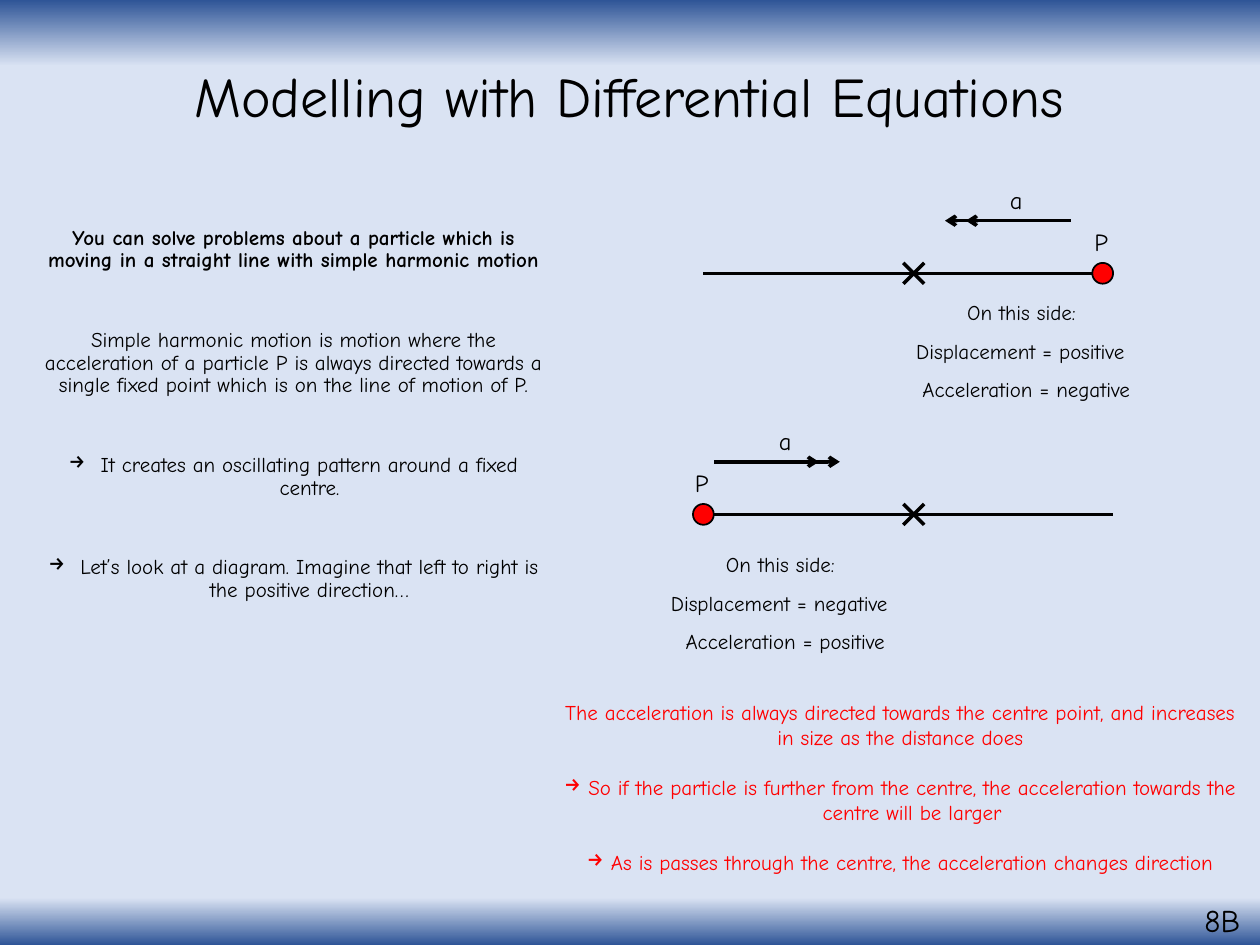
from dataclasses import dataclass
from typing import Any, NamedTuple

from lxml import etree
from pptx import Presentation
from pptx.dml.color import RGBColor
from pptx.enum.shapes import MSO_CONNECTOR, MSO_SHAPE
from pptx.enum.text import MSO_ANCHOR, MSO_AUTO_SIZE, PP_ALIGN
from pptx.oxml.ns import qn
from pptx.util import Cm, Pt

LEFT, CENTER = PP_ALIGN.LEFT, PP_ALIGN.CENTER
TOP, MIDDLE = MSO_ANCHOR.TOP, MSO_ANCHOR.MIDDLE
GROW, FIXED = MSO_AUTO_SIZE.SHAPE_TO_FIT_TEXT, MSO_AUTO_SIZE.NONE
STRAIGHT, OVAL = MSO_CONNECTOR.STRAIGHT, MSO_SHAPE.OVAL


@dataclass(frozen=True)
class Theme:
    font: str = "Comic Neue"
    ink: str = "000000"
    accent: str = "FF0000"
    edge: str = "2F5597"
    paper: str = "DAE3F3"
    title: int = 32
    page: int = 18
    label: int = 14
    text: int = 12
    line: int = 2
    outline: int = 1


class Para(NamedTuple):
    text: str
    bold: bool = False
    arrow: bool = False


class Box(NamedTuple):
    """Left, top, width and height in centimetres."""
    left: float
    top: float
    width: float
    height: float

    def lengths(self) -> list[Cm]:
        return [Cm(value) for value in self]


@dataclass(frozen=True)
class Swing:
    """One position of the particle; inward is the sign of the acceleration."""
    line_y: float
    particle_x: float
    inward: int
    arrow_tip: float
    label_left: float
    caption_center: float
    caption_top: float
    displacement: str
    acceleration: str


THEME = Theme()
LINE_START, LINE_END, CENTRE_X = 14.18, 22.43, 18.42
MARK = 0.42  # size of the cross and particle, and gap between arrowheads
ARROW_LENGTH = 2.12
LABEL_RISE = 1.06
CAPTION_HEIGHT, CAPTION_STEP = 0.77, 0.77

SWINGS = [
    Swing(5.51, 22.23, -1, 19.05, 20.11, 20.57, 5.92, "positive", "negative"),
    Swing(10.37, 14.18, 1, 16.93, 15.45, 15.71, 11.0, "negative", "positive"),
]
EXPLANATION = [
    Para("You can solve problems about a particle which is moving in a straight "
         "line with simple harmonic motion", bold=True),
    Para("Simple harmonic motion is motion where the acceleration of a particle P "
         "is always directed towards a single fixed point which is on the line of "
         "motion of P."),
    Para("It creates an oscillating pattern around a fixed centre.", arrow=True),
    Para("Let’s look at a diagram. Imagine that left to right is the positive "
         "direction…", arrow=True),
]
CONCLUSION = [
    Para("The acceleration is always directed towards the centre point, and "
         "increases in size as the distance does"),
    Para("So if the particle is further from the centre, the acceleration towards "
         "the centre will be larger", arrow=True),
    Para("As is passes through the centre, the acceleration changes direction",
         arrow=True),
]


def paint_background(slide: Any) -> None:
    slide.background.fill.gradient()
    gradient = slide.element.xpath(".//p:bg//a:gradFill")[0]
    for child in list(gradient):
        gradient.remove(child)
    stops = etree.SubElement(gradient, qn("a:gsLst"))
    for percent, color in ((0, THEME.edge), (7, THEME.paper),
                           (95, THEME.paper), (100, THEME.edge)):
        stop = etree.SubElement(stops, qn("a:gs"), pos=str(percent * 1000))
        etree.SubElement(stop, qn("a:srgbClr"), val=color)
    etree.SubElement(gradient, qn("a:lin"), ang="5400000", scaled="0")


def add_arrow_bullet(paragraph: Any, indent: float) -> None:
    properties = paragraph._p.get_or_add_pPr()
    properties.set("marL", str(Cm(indent)))
    properties.set("indent", str(-Cm(indent)))
    etree.SubElement(properties, qn("a:buChar"), char="→")


def add_text(slide: Any, box: Box, paras: list[Para], *, size: int = THEME.text,
             color: str = THEME.ink, align: PP_ALIGN = CENTER,
             anchor: MSO_ANCHOR = TOP, wrap: bool = True,
             fit: MSO_AUTO_SIZE = GROW, spacing: float = 1.0,
             gap: float = 0, indent: float = 0) -> None:
    frame = slide.shapes.add_textbox(*box.lengths()).text_frame
    frame.word_wrap, frame.auto_size, frame.vertical_anchor = wrap, fit, anchor
    for index, para in enumerate(paras):
        paragraph = frame.add_paragraph() if index else frame.paragraphs[0]
        paragraph.alignment, paragraph.line_spacing = align, spacing
        paragraph.space_before = Pt(gap if index else 0)
        if para.arrow:
            add_arrow_bullet(paragraph, indent)
        span = paragraph.add_run()
        span.text = para.text
        span.font.name, span.font.size, span.font.bold = THEME.font, Pt(size), para.bold
        span.font.color.rgb = RGBColor.from_string(color)


def add_line(shapes: Any, start: tuple[float, float], end: tuple[float, float],
             arrow: bool = False) -> None:
    """Draw a line, with an optional arrowhead at its start."""
    line = shapes.add_connector(STRAIGHT, *(Cm(value) for value in start + end))
    line.line.width = Pt(THEME.line)
    line.line.color.rgb = RGBColor.from_string(THEME.ink)
    if arrow:
        etree.SubElement(line.line._get_or_add_ln(), qn("a:headEnd"), type="arrow")
    etree.SubElement(line._element.spPr, qn("a:effectLst"))


def add_cross(slide: Any, x: float, y: float) -> None:
    cross, half = slide.shapes.add_group_shape().shapes, MARK / 2
    for rise in (-half, half):
        add_line(cross, (x - half, y + rise), (x + half, y - rise))


def add_particle(slide: Any, x: float, y: float) -> None:
    box = Box(x - MARK / 2, y - MARK / 2, MARK, MARK)
    particle = slide.shapes.add_shape(OVAL, *box.lengths())
    particle.shadow.inherit = False
    particle.fill.solid()
    particle.fill.fore_color.rgb = RGBColor.from_string(THEME.accent)
    particle.line.color.rgb = RGBColor.from_string(THEME.ink)
    particle.line.width = Pt(THEME.outline)


def add_double_arrow(slide: Any, tip: float, y: float, inward: int) -> None:
    arrows = slide.shapes.add_group_shape().shapes
    for head in (tip, tip - inward * MARK):
        add_line(arrows, (head, y), (head - inward * ARROW_LENGTH, y), arrow=True)


def add_swing(slide: Any, swing: Swing) -> None:
    y = swing.line_y
    add_line(slide.shapes, (LINE_START, y), (LINE_END, y))
    add_cross(slide, CENTRE_X, y)
    add_particle(slide, swing.particle_x, y)
    add_double_arrow(slide, swing.arrow_tip, y - LABEL_RISE, swing.inward)
    for text, left, top in (("a", swing.label_left, y - 1.9),
                            ("P", swing.particle_x - 0.42, y - LABEL_RISE)):
        add_text(slide, Box(left, top, 0.76, 0.86), [Para(text)],
                 size=THEME.label, align=LEFT, wrap=False)
    captions = (("On this side:", 0.2, 3.05, LEFT, False),
                (f"Displacement = {swing.displacement}", 0, 5.25, CENTER, False),
                (f"Acceleration = {swing.acceleration}", 0.12, 5.51, CENTER, True))
    for row, (text, shift, width, align, wrap) in enumerate(captions):
        box = Box(swing.caption_center + shift - width / 2,
                  swing.caption_top + row * CAPTION_STEP, width, CAPTION_HEIGHT)
        add_text(slide, box, [Para(text)], align=align, wrap=wrap)


def main() -> None:
    deck = Presentation()
    deck.slide_width, deck.slide_height = Cm(25.4), Cm(19.05)
    slide = deck.slides.add_slide(deck.slide_layouts[6])
    paint_background(slide)
    add_text(slide, Box(0.61, 4.45, 10.62, 12.57), EXPLANATION, fit=FIXED,
             spacing=0.9, gap=32.6, indent=0.64)
    for swing in SWINGS:
        add_swing(slide, swing)
    add_text(slide, Box(10.95, 13.97, 14.4, 3.84), CONCLUSION,
             color=THEME.accent, gap=14.3, indent=0.48)
    add_text(slide, Box(1.75, 0.61, 21.89, 2.77),
             [Para("Modelling with Differential Equations")],
             size=THEME.title, anchor=MIDDLE, fit=FIXED, spacing=0.9)
    add_text(slide, Box(24.03, 18.03, 1.32, 1.02), [Para("8B")],
             size=THEME.page, align=LEFT, wrap=False)
    deck.save("out.pptx")


if __name__ == "__main__":
    main()
